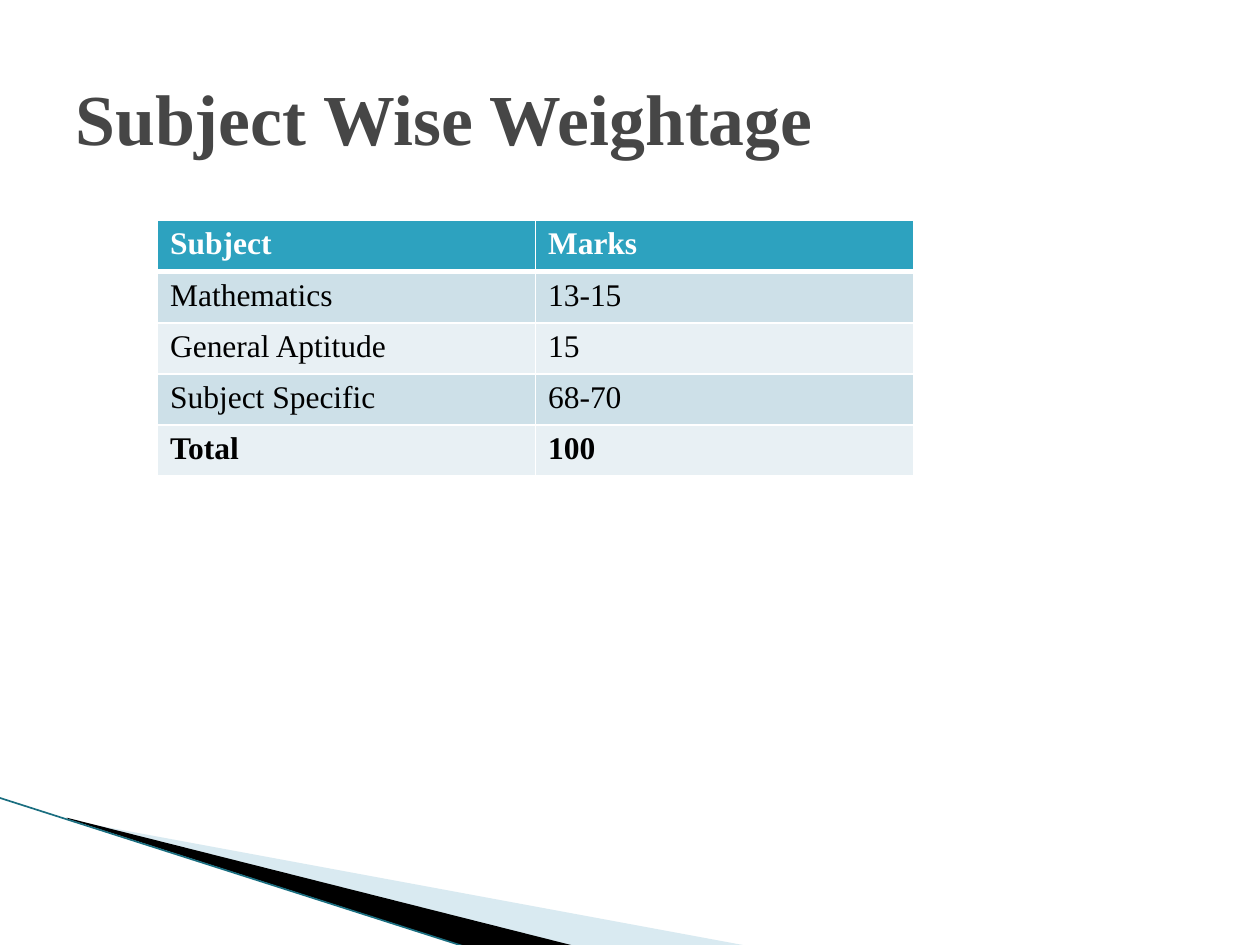
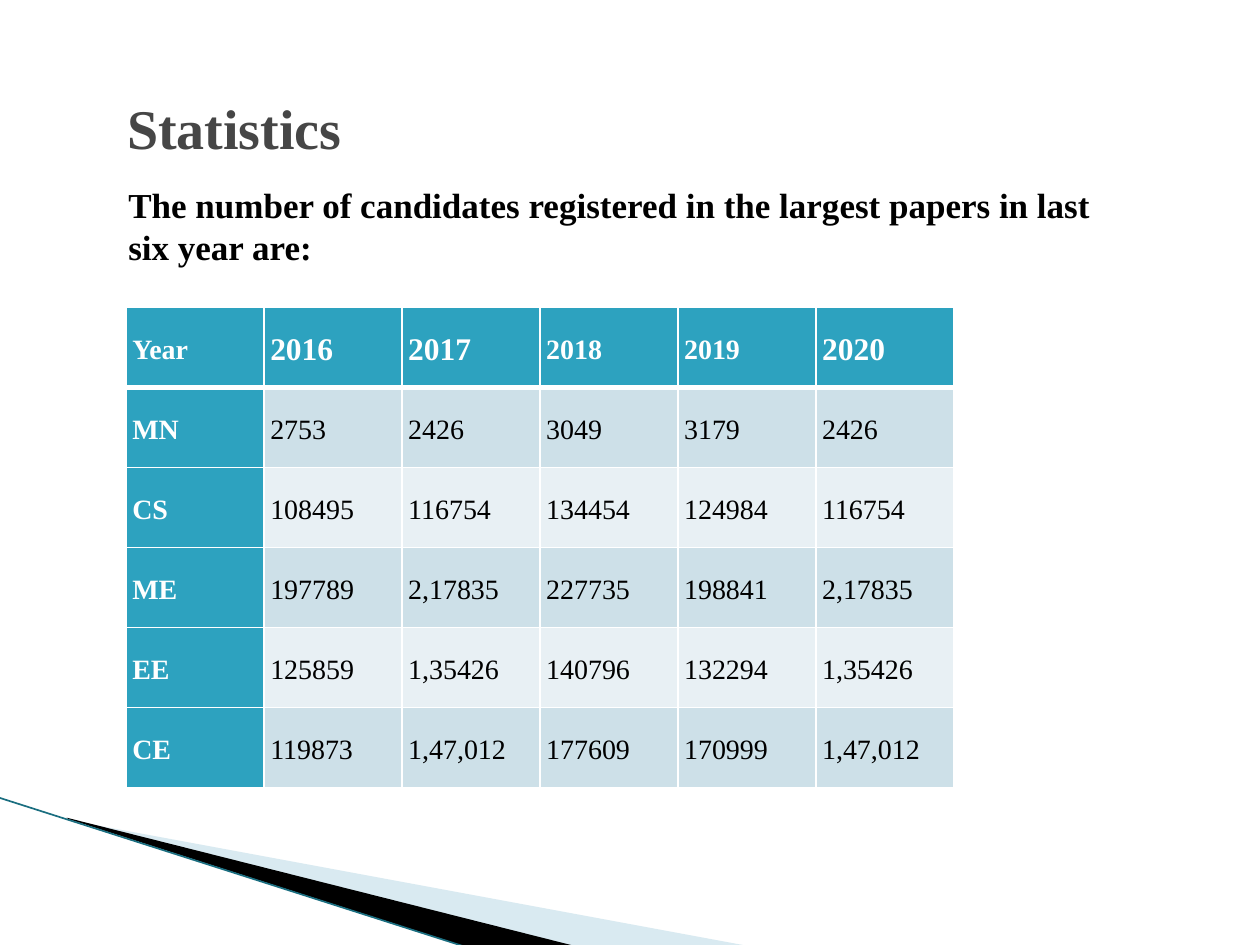
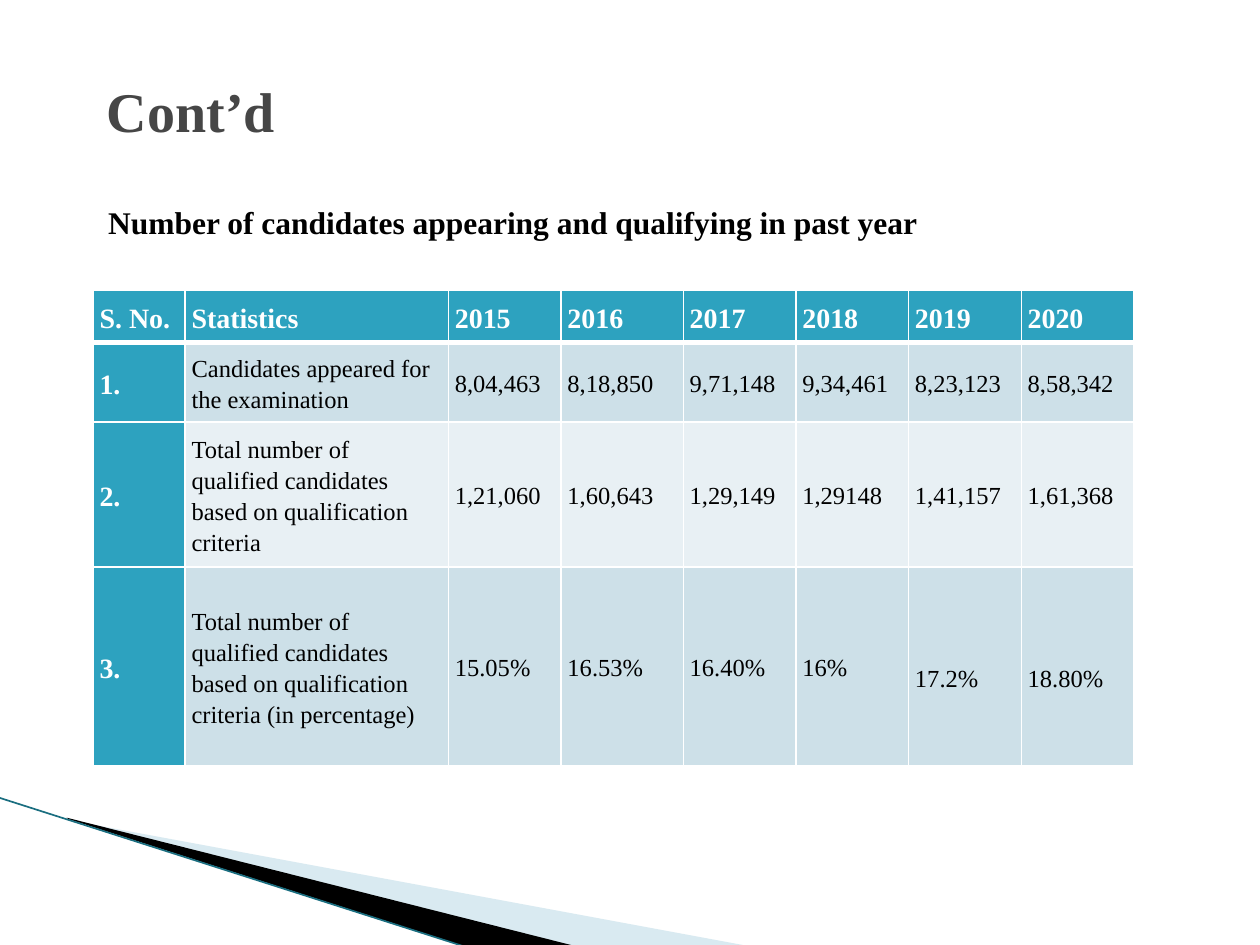
from pptx import Presentation, util as u
from pptx.dml.color import RGBColor
from pptx.enum import shapes, text
from pptx.oxml import parse_xml
from pptx.oxml.ns import nsdecls, qn
from lxml import etree

FONT = "Times New Roman"
HUES = {
    "title": "464646", "ink": "000000", "white": "FFFFFF",
    "head": "2DA2BF", "odd": "CDE0E8", "even": "E8F0F4",
    "pale": "A0CBDC", "edge": "1A6E80",
}

# Corner wedges: outline points, colour, opacity in percent
WEDGES = [
    ([(0.55, 6.51), (5.95, 7.51), (4.56, 7.51), (0.55, 6.5)], "pale", 40),
    ([(0.53, 6.49), (4.57, 7.51), (3.72, 7.52), (0.54, 6.5)], "ink", 100),
]

MARKS = [
    ["Subject", "Marks"],
    ["Mathematics", "13-15"],
    ["General Aptitude", "15"],
    ["Subject Specific", "68-70"],
    ["Total", "100"],
]

PAPERS = [
    ["Year", "2016", "2017", "2018", "2019", "2020"],
    ["MN", "2753", "2426", "3049", "3179", "2426"],
    ["CS", "108495", "116754", "134454", "124984", "116754"],
    ["ME", "197789", "2,17835", "227735", "198841", "2,17835"],
    ["EE", "125859", "1,35426", "140796", "132294", "1,35426"],
    ["CE", "119873", "1,47,012", "177609", "170999", "1,47,012"],
]

RESULTS = [
    ["S. No.", "Statistics", "2015", "2016", "2017", "2018", "2019", "2020"],
    ["1.", "Candidates appeared for the examination",
     "8,04,463", "8,18,850", "9,71,148", "9,34,461", "8,23,123", "8,58,342"],
    ["2.", "Total number of qualified candidates based on qualification criteria",
     "1,21,060", "1,60,643", "1,29,149", "1,29148", "1,41,157", "1,61,368"],
    ["3.", "Total number of qualified candidates based on qualification criteria "
     "(in percentage)",
     "15.05%", "16.53%", "16.40%", "16%", "17.2%", "18.80%"],
]


def hue(name):
    return RGBColor.from_string(HUES[name])


def style(para, size, color, bold):
    font = para.font
    font.name, font.size, font.bold = FONT, u.Pt(size), bold
    font.color.rgb = hue(color)


def label(slide, words, box, size, color="ink", anchor=text.MSO_ANCHOR.TOP):
    frame = slide.shapes.add_textbox(*map(u.Inches, box)).text_frame
    frame.word_wrap = True
    frame.vertical_anchor = anchor
    para = frame.paragraphs[0]
    para.text = words
    style(para, size, color, True)


def title(slide, words, box, size=32):
    label(slide, words, box, size, "title", text.MSO_ANCHOR.MIDDLE)


def corner(slide):
    for points, color, alpha in WEDGES:
        spots = [(u.Inches(x), u.Inches(y)) for x, y in points]
        pen = slide.shapes.build_freeform(*spots[0])
        pen.add_line_segments(spots[1:], close=True)
        wedge = pen.convert_to_shape()
        wedge.shadow.inherit = False
        wedge.fill.solid()
        wedge.fill.fore_color.rgb = hue(color)
        wedge.line.fill.background()
        if alpha < 100:
            tint = wedge.fill._xPr.find(".//" + qn("a:srgbClr"))
            etree.SubElement(tint, qn("a:alpha"), val=str(alpha * 1000))
    edge = slide.shapes.add_connector(
        shapes.MSO_CONNECTOR.STRAIGHT,
        *map(u.Inches, (-0.01, 6.33, 3.71, 7.52)))
    edge.line.color.rgb = hue("edge")
    edge.line.width = u.Pt(0.95)
    etree.SubElement(edge._element.spPr, qn("a:effectLst"))


def border(cell, row):
    # The rule under the heading row is thicker
    widths = {"lnL": 1, "lnR": 1, "lnT": 3 if row == 1 else 1,
              "lnB": 3 if row == 0 else 1}
    for side, width in widths.items():
        cell._tc.get_or_add_tcPr().append(parse_xml(
            f'<a:{side} {nsdecls("a")} w="{u.Pt(width)}"><a:solidFill>'
            f'<a:srgbClr val="{HUES["white"]}"/></a:solidFill></a:{side}>'))


def grid(slide, data, spot, cols, rows, head, body, lead=True):
    """Draw a banded table; lead gives a coloured first column and tight cells."""
    box = (*spot, sum(cols), sum(rows))
    table = slide.shapes.add_table(
        len(rows), len(cols), *map(u.Inches, box)).table
    table.first_col, table.horz_banding = lead, False
    for col, width in zip(table.columns, cols):
        col.width = u.Inches(width)
    for r, (line, height) in enumerate(zip(data, rows)):
        table.rows[r].height = u.Inches(height)
        for c, words in enumerate(line):
            cell = table.cell(r, c)
            top = r == 0 or (lead and c == 0)
            border(cell, r)
            cell.fill.solid()
            cell.fill.fore_color.rgb = hue(
                "head" if top else "odd" if r % 2 else "even")
            cell.text = words
            para = cell.text_frame.paragraphs[0]
            if lead:
                cell.vertical_anchor = text.MSO_ANCHOR.MIDDLE
                cell.margin_left = cell.margin_right = u.Inches(0.05)
                cell.margin_top = cell.margin_bottom = u.Inches(0.05)
                para.line_spacing = 1.15
            style(para, head if top else body, "white" if top else "ink",
                  top or line[0] == "Total")
    return table


def weights(slide):
    grid(slide, MARKS, (1.25, 1.75), [3] * 2, [2.03 / 5] * 5, 18, 18, lead=False)
    title(slide, "Subject Wise Weightage", (0.5, 0.3, 9, 1.25), 41)


def papers(slide):
    table = grid(slide, PAPERS, (1, 2.44), [6.57 / 6] * 6, [3.81 / 6] * 6, 16, 16)
    # Larger year headings
    for c in (1, 2, 5):
        table.cell(0, c).text_frame.paragraphs[0].font.size = u.Pt(18)
    title(slide, "Statistics", (0.91, 0.59, 8.58, 0.83))
    label(slide, "The number of candidates registered in the largest papers "
          "in last six year are:", (0.92, 1.41, 8, 0.77), 20)


def results(slide):
    year = 0.89 + 0.03 / 7
    cols = [0.73, 2.09, year, 0.97] + [year] * 4
    table = grid(slide, RESULTS, (0.74, 2.3), cols, [0.42, 0.63, 1.15, 1.58], 16, 14)
    # The last two percentages sit a little lower
    for c in (6, 7):
        table.cell(3, c).margin_top = u.Inches(0.22)
    title(slide, "Cont’d", (0.75, 0.5, 8.75, 0.75))
    label(slide, "Number of candidates appearing and qualifying in past year",
          (0.76, 1.56, 7.76, 0.4), 18)


def main():
    deck = Presentation()
    deck.slide_width, deck.slide_height = u.Inches(10), u.Inches(7.5)
    for build in (weights, papers, results):
        slide = deck.slides.add_slide(deck.slide_layouts[6])
        corner(slide)
        build(slide)
    deck.save("out.pptx")


if __name__ == "__main__":
    main()
